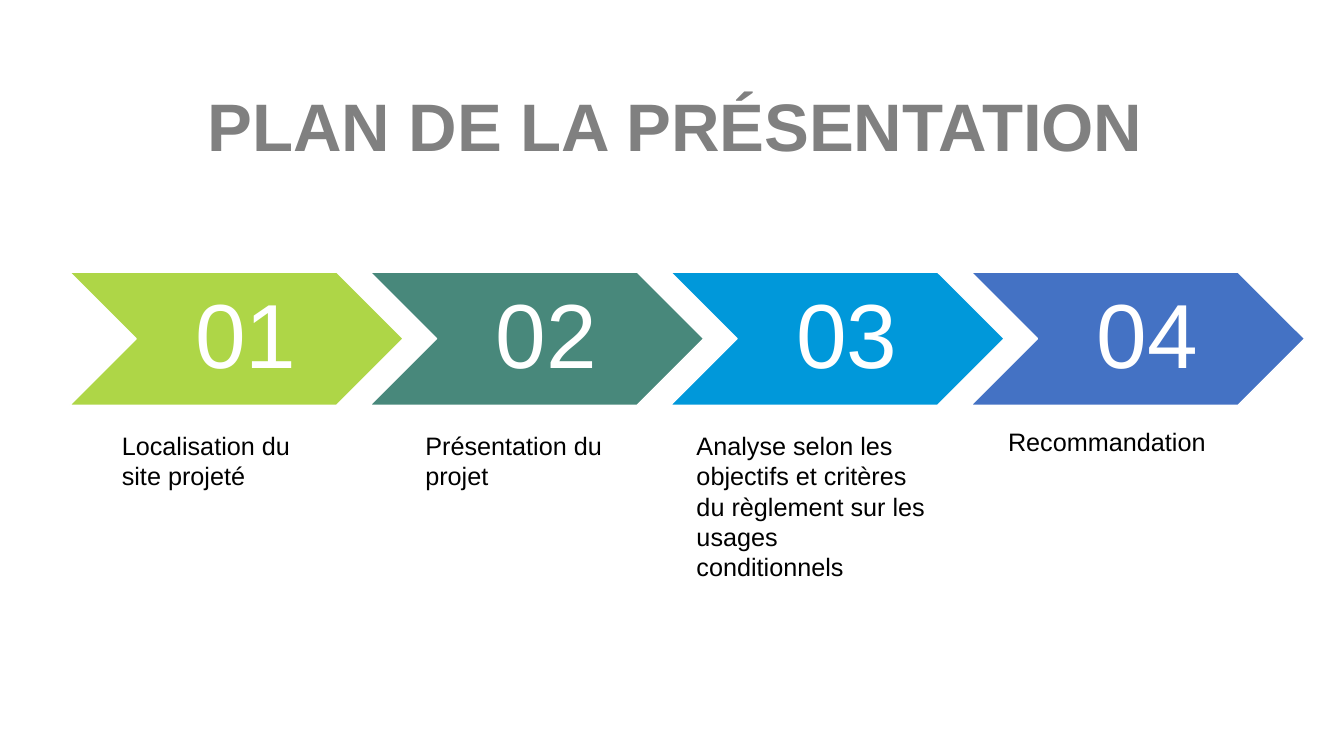
from pptx import Presentation
from pptx.dml.color import RGBColor
from pptx.enum.shapes import MSO_SHAPE
from pptx.enum.text import MSO_ANCHOR, PP_ALIGN
from pptx.util import Inches, Pt


def color(hex_value):
    return RGBColor.from_string(hex_value)


def write_text(shape, text, text_color, alignment, font_format):
    shape.text_frame.word_wrap = True
    paragraph = shape.text_frame.paragraphs[0]
    paragraph.alignment = alignment
    run = paragraph.add_run()
    run.text = text
    run.font.color.rgb = color(text_color)
    for name, value in font_format.items():
        setattr(run.font, name, value)
    return paragraph


presentation = Presentation()
presentation.slide_width = Inches(13.33)
presentation.slide_height = Inches(7.5)
slide = presentation.slides.add_slide(presentation.slide_layouts[6])

title_format = {"name": "Arial", "size": Pt(48), "bold": True}
number_format = {"name": "Arial", "size": Pt(65)}
label_format = {"name": "Arial", "size": Pt(18)}
number_frame_format = {
    "margin_left": Inches(0.28),
    "margin_right": Inches(0.09),
    "margin_top": Inches(0.09),
    "margin_bottom": Inches(0.09),
    "vertical_anchor": MSO_ANCHOR.MIDDLE,
}

# Title
title = slide.shapes.add_textbox(Inches(1.46), Inches(0.79), Inches(10.48), Inches(0.91))
write_text(title, "PLAN DE LA PRÉSENTATION", "808080", PP_ALIGN.CENTER, title_format)

# Steps: chevron colour, label, label left, top, width, height
steps = [
    ("AED647", "Localisation du site projeté", 1.11, 4.22, 2.18, 0.71),
    ("48887B", "Présentation du projet", 4.12, 4.22, 2.18, 0.71),
    ("0098DA", "Analyse selon les objectifs et critères du règlement sur les usages conditionnels",
     6.81, 4.22, 2.53, 1.62),
    ("4472C4", "Recommandation", 9.9, 4.18, 2.53, 0.4),
]
first_left, pitch = 0.69, 2.98

for index, (fill, label, *box) in enumerate(steps):
    # Numbered chevron
    chevron = slide.shapes.add_shape(
        MSO_SHAPE.CHEVRON, Inches(first_left + index * pitch), Inches(2.7),
        Inches(3.31), Inches(1.32))
    chevron.shadow.inherit = False
    chevron.fill.solid()
    chevron.fill.fore_color.rgb = color(fill)
    chevron.line.color.rgb = color("FFFFFF")
    chevron.line.width = Pt(1)
    for name, value in number_frame_format.items():
        setattr(chevron.text_frame, name, value)
    number = write_text(chevron, f"{index + 1:02}", "FFFFFF", PP_ALIGN.CENTER, number_format)
    number.line_spacing = 0.9

    # Label below
    label_box = slide.shapes.add_textbox(*[Inches(length) for length in box])
    write_text(label_box, label, "000000", PP_ALIGN.LEFT, label_format)

presentation.save("out.pptx")
